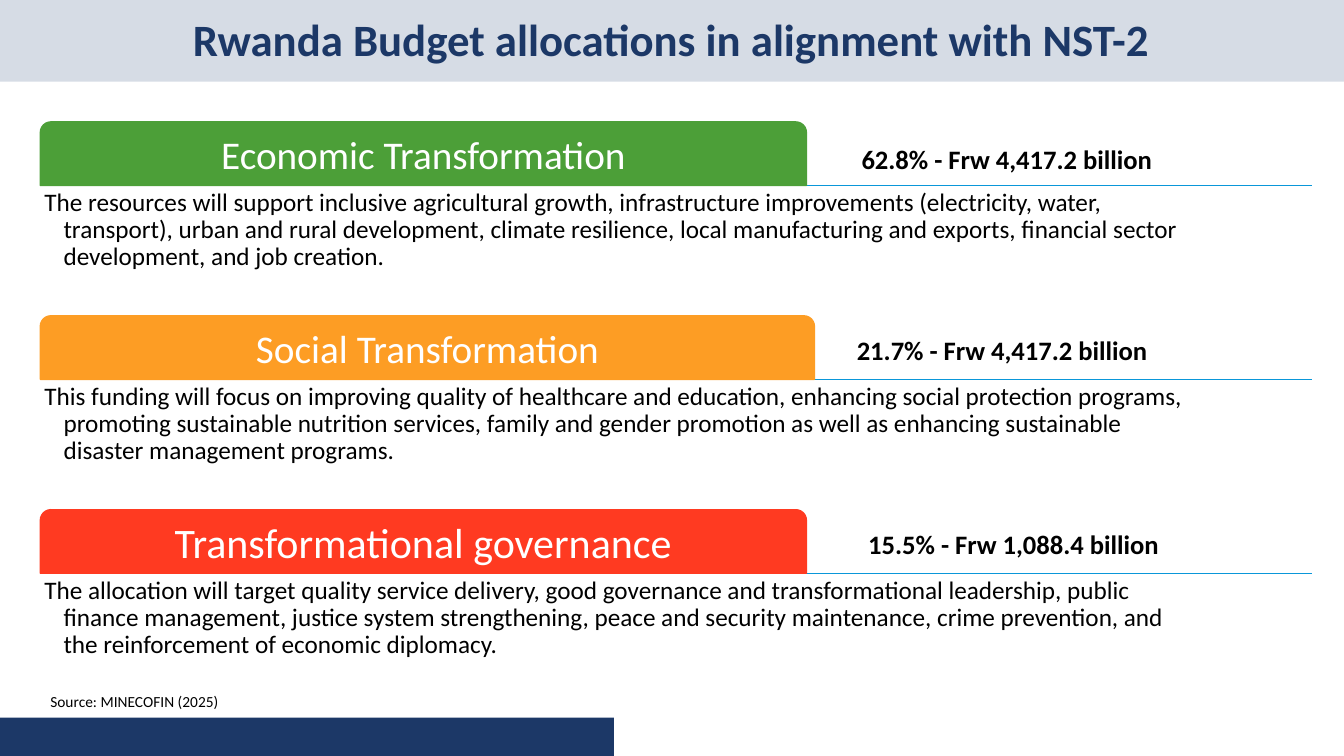
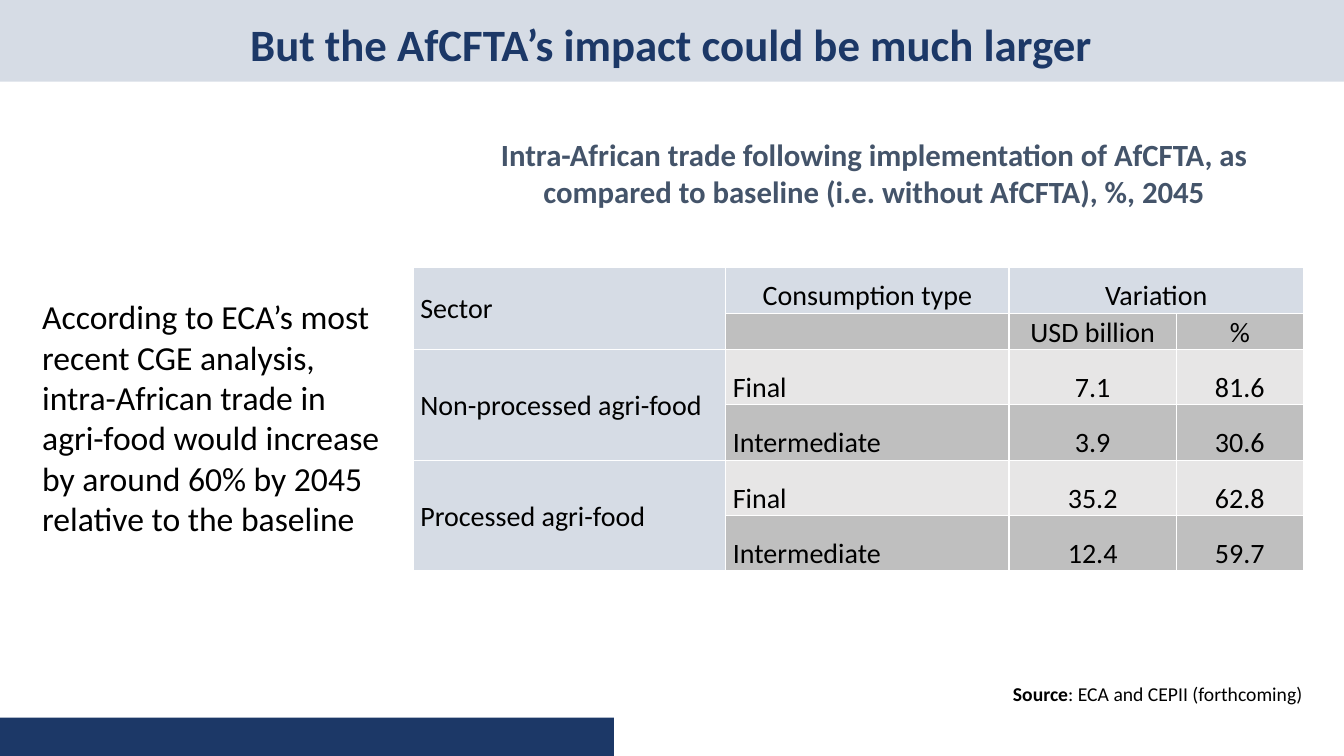
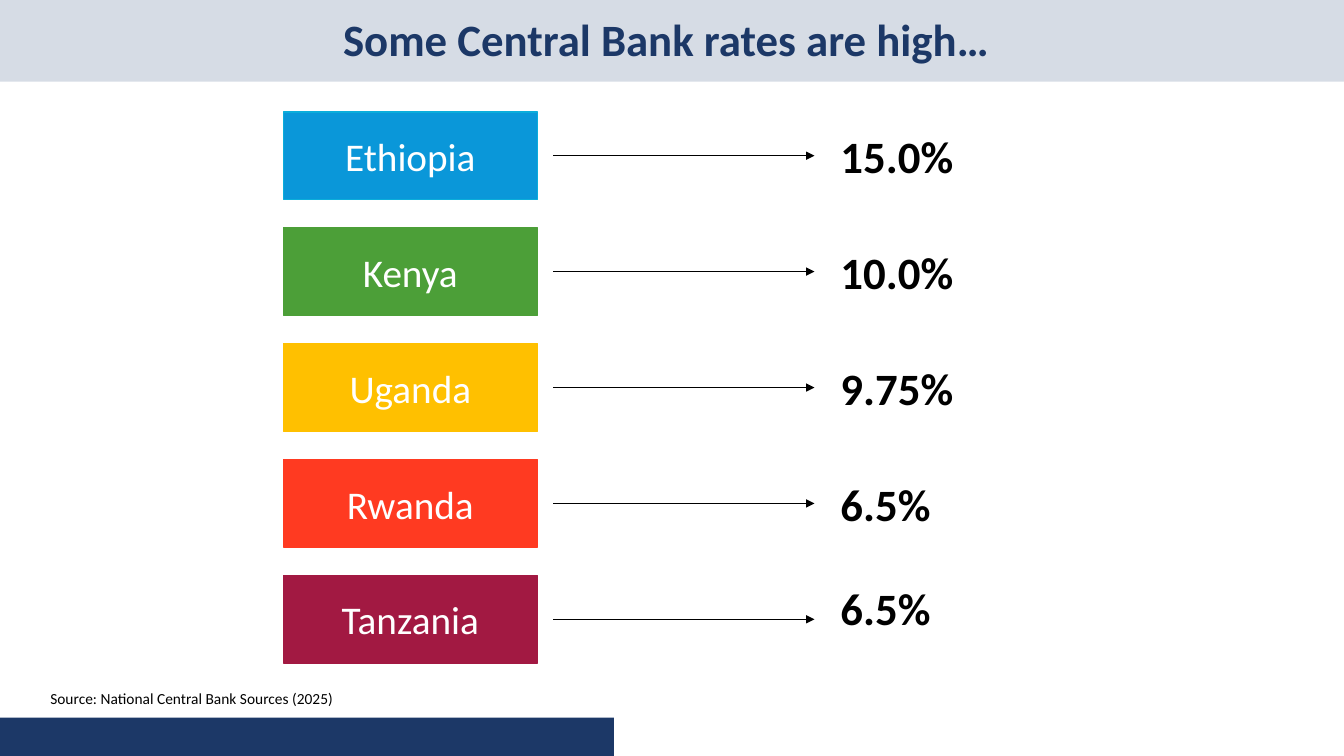
from dataclasses import dataclass
from itertools import product
from typing import NamedTuple

from lxml.etree import SubElement
from pptx import Presentation
from pptx.dml.color import RGBColor as Rgb
from pptx.enum.shapes import MSO_CONNECTOR as Link, MSO_SHAPE as Kind
from pptx.enum.text import MSO_ANCHOR as Anchor, PP_ALIGN as Align
from pptx.oxml.ns import qn
from pptx.util import Emu, Inches, Pt

WIDE, HIGH = Inches(13.33), Inches(7.5)
FONT = "Calibri"
HUES = {
    "navy": "1C3867", "pale": "D6DCE5", "slate": "44546A",
    "black": "000000", "white": "FFFFFF", "grey": "BFBFBF", "light": "E7E6E6",
    "blue": "0A97D9", "sky": "0BADDB", "green": "4C9F38", "orange": "FD9D24",
    "gold": "FFC000", "red": "FF3A21", "wine": "A21942",
}


class Area(NamedTuple):
    x: float
    y: float
    w: float
    h: float


@dataclass
class Pillar:
    name: str
    hue: str
    width: float
    size: int
    share: str
    left: float
    top: float
    body: str


@dataclass
class Rate:
    land: str
    hue: str
    edge: str
    value: str
    lift: float = 0


PILLARS = [
    Pillar("Economic Transformation", "green", 57, 28,
           "62.8% - Frw 4,417.2 billion", 63.8, 16.8,
           "The resources will support inclusive agricultural growth, infrastructure "
           "improvements (electricity, water, transport), urban and rural development, "
           "climate resilience, local manufacturing and exports, financial sector "
           "development, and job creation."),
    Pillar("Social Transformation", "orange", 57.6, 28,
           "21.7% - Frw 4,417.2 billion", 63.45, 42,
           "This funding will focus on improving quality of healthcare and education, "
           "enhancing social protection programs, promoting sustainable nutrition "
           "services, family and gender promotion as well as enhancing sustainable "
           "disaster management programs."),
    Pillar("Transformational governance", "red", 57, 30,
           "15.5% - Frw 1,088.4 billion", 64.3, 67.73,
           "The allocation will target quality service delivery, good governance and "
           "transformational leadership, public finance management, justice system "
           "strengthening, peace and security maintenance, crime prevention, and the "
           "reinforcement of economic diplomacy."),
]

RATES = [
    Rate("Ethiopia", "blue", "sky", "15.0%"),
    Rate("Kenya", "green", "green", "10.0%"),
    Rate("Uganda", "gold", "gold", "9.75%"),
    Rate("Rwanda", "red", "red", "6.5%"),
    Rate("Tanzania", "wine", "wine", "6.5%", 1.6),
]

TRADE = [
    ["Sector", "Consumption type", "Variation", ""],
    ["", "", "USD billion", "%"],
    ["Non-processed agri-food", "Final", "7.1", "81.6"],
    ["", "Intermediate", "3.9", "30.6"],
    ["Processed agri-food", "Final", "35.2", "62.8"],
    ["", "Intermediate", "12.4", "59.7"],
]
COLS = [23.25, 21.08, 12.45, 9.45]
ROWS = [6.13, 4.67] + [7.33] * 4
SPANS = [(0, 0, 1, 0), (0, 2, 0, 3), (2, 0, 3, 0), (4, 0, 5, 0)]


def tint(name: str) -> Rgb:
    return Rgb.from_string(HUES[name])


def across(share: float) -> Emu:
    return Emu(round(WIDE * share / 100))


def down(share: float) -> Emu:
    return Emu(round(HIGH * share / 100))


def place(area: Area) -> tuple:
    return across(area.x), down(area.y), across(area.w), down(area.h)


def write(frame, text, *, size: float, hue: str = "black", bold: bool = False,
          align=Align.LEFT, space: float = 1, hang: float = 0) -> None:
    para = frame.paragraphs[0]
    para.alignment = align
    para.line_spacing = space
    if hang:
        props = para._p.get_or_add_pPr()
        props.set("marL", str(Inches(hang)))
        props.set("indent", str(-Inches(hang)))
    runs = [(text, bold)] if isinstance(text, str) else text
    for words, heavy in runs:
        run = para.add_run()
        run.text = words
        run.font.name = FONT
        run.font.size = Pt(size)
        run.font.bold = heavy
        run.font.color.rgb = tint(hue)


def label(slide, area: Area, text, *, anchor=Anchor.TOP, inset: float | None = None,
          wrap: bool = True, **style) -> None:
    frame = slide.shapes.add_textbox(*place(area)).text_frame
    frame.word_wrap = wrap
    frame.vertical_anchor = anchor
    if inset is not None:
        frame.margin_left = frame.margin_right = Inches(inset)
        frame.margin_top = frame.margin_bottom = Inches(inset)
    write(frame, text, **style)


def block(slide, area: Area, hue: str, edge: str = "", kind=Kind.RECTANGLE):
    shape = slide.shapes.add_shape(kind, *place(area))
    shape.shadow.inherit = False
    shape.fill.solid()
    shape.fill.fore_color.rgb = tint(hue)
    if edge:
        shape.line.color.rgb = tint(edge)
        shape.line.width = Pt(1)
    else:
        shape.line.fill.background()
    shape.text_frame.vertical_anchor = Anchor.MIDDLE
    return shape


def rule(slide, start: float, end: float, y: float, hue: str, width: float,
         arrow: bool = False) -> None:
    line = slide.shapes.add_connector(
        Link.STRAIGHT, across(start), down(y), across(end), down(y))
    line.line.color.rgb = tint(hue)
    line.line.width = Pt(width)
    if arrow:
        SubElement(line.line._get_or_add_ln(), qn("a:tailEnd"), type="triangle")
    SubElement(line._element.spPr, qn("a:effectLst"))


def start(deck, title: str, top: float = 1.33):
    slide = deck.slides.add_slide(deck.slide_layouts[6])
    block(slide, Area(0, 0, 100, 10.8), "pale")
    block(slide, Area(0, 94.93, 45.68, 5.07), "navy")
    label(slide, Area(3, top, 93.9, 8.53), title, anchor=Anchor.MIDDLE,
          size=32, hue="navy", bold=True, align=Align.CENTER, space=0.9)
    return slide


def budget(deck) -> None:
    slide = start(deck, "Rwanda Budget allocations in alignment with NST-2")
    for row, item in enumerate(PILLARS):
        top = 16.13 + 25.65 * row
        base = top + 8.4
        rule(slide, 11.7, 97.65, base, "blue", 1)
        head = block(slide, Area(3, top, item.width, 8.4), item.hue, item.hue,
                     Kind.ROUND_2_SAME_RECTANGLE)
        head.text_frame.margin_top = Inches(0.08)
        write(head.text_frame, item.name, size=item.size, hue="white",
              align=Align.CENTER, space=0.9)
        label(slide, Area(item.left, item.top, 28, 6.93), item.share, inset=0.04,
              anchor=Anchor.BOTTOM, size=19, bold=True, space=0.9)
        label(slide, Area(3, base, 85.95, 16.8), item.body, inset=0.04,
              size=18, space=0.9, hang=0.19)
    label(slide, Area(3, 90.93, 50, 3.87), "Source: MINECOFIN (2025)", size=11)


def border(cell) -> None:
    props = cell._tc.get_or_add_tcPr()
    for spot, side in enumerate(["lnL", "lnR", "lnT", "lnB"]):
        line = SubElement(props, qn(f"a:{side}"), w=str(Pt(1)))
        fill = SubElement(line, qn("a:solidFill"))
        SubElement(fill, qn("a:srgbClr"), val=HUES["white"])
        props.insert(spot, line)


def grid(slide) -> None:
    area = Area(30.75, 35.33, sum(COLS), sum(ROWS))
    table = slide.shapes.add_table(len(ROWS), len(COLS), *place(area)).table
    table.first_row = table.horz_banding = False
    for col, width in zip(table.columns, COLS):
        col.width = across(width)
    for row, height in zip(table.rows, ROWS):
        row.height = down(height)
    for r, c in product(range(len(ROWS)), range(len(COLS))):
        cell = table.cell(r, c)
        cell.margin_left = cell.margin_right = Inches(0.07)
        cell.margin_top = cell.margin_bottom = 0
        cell.vertical_anchor = Anchor.BOTTOM if c else Anchor.MIDDLE
        cell.fill.solid()
        hue = "pale" if r == 0 or c == 0 else "grey" if r % 2 else "light"
        cell.fill.fore_color.rgb = tint(hue)
        border(cell)
        if TRADE[r][c]:
            mid = c > 1 or (r == 0 and c == 1)
            write(cell.text_frame, TRADE[r][c], size=20, space=1.07,
                  align=Align.CENTER if mid else Align.LEFT)
    for top, left, low, right in SPANS:
        table.cell(top, left).merge(table.cell(low, right))


def trade(deck) -> None:
    slide = start(deck, "But the AfCFTA’s impact could be much larger", 2)
    label(slide, Area(35.63, 17.33, 58.8, 11.2),
          "Intra-African trade following implementation of AfCFTA, as compared to "
          "baseline (i.e. without AfCFTA), %, 2045",
          size=22, hue="slate", bold=True, align=Align.CENTER)
    label(slide, Area(74.63, 89.6, 24.53, 4.53),
          [("Source", True), (": ECA and CEPII (forthcoming)", False)], size=14)
    label(slide, Area(2.4, 38.53, 27.3, 33.6),
          "According to ECA’s most recent CGE analysis, intra-African trade in "
          "agri-food would increase by around 60% by 2045 relative to the baseline",
          size=24)
    grid(slide)


def rates(deck) -> None:
    slide = start(deck, "Some Central Bank rates are high… ")
    for row, item in enumerate(RATES):
        top = 14.8 + 15.33 * row
        box = block(slide, Area(21.08, top, 18.9, 11.6), item.hue, item.edge)
        write(box.text_frame, item.land, size=28, hue="white", align=Align.CENTER)
        rule(slide, 41.18, 60.6, top + 5.8, "black", 0.5, arrow=True)
        label(slide, Area(61.8, top + 1.6 - item.lift, 10, 8.53), item.value,
              wrap=False, size=32, bold=True)
    label(slide, Area(3, 90.53, 39.75, 3.87),
          "Source: National Central Bank Sources (2025)", size=11)


def main() -> None:
    deck = Presentation()
    deck.slide_width, deck.slide_height = WIDE, HIGH
    for build in (budget, trade, rates):
        build(deck)
    deck.save("out.pptx")


if __name__ == "__main__":
    main()
